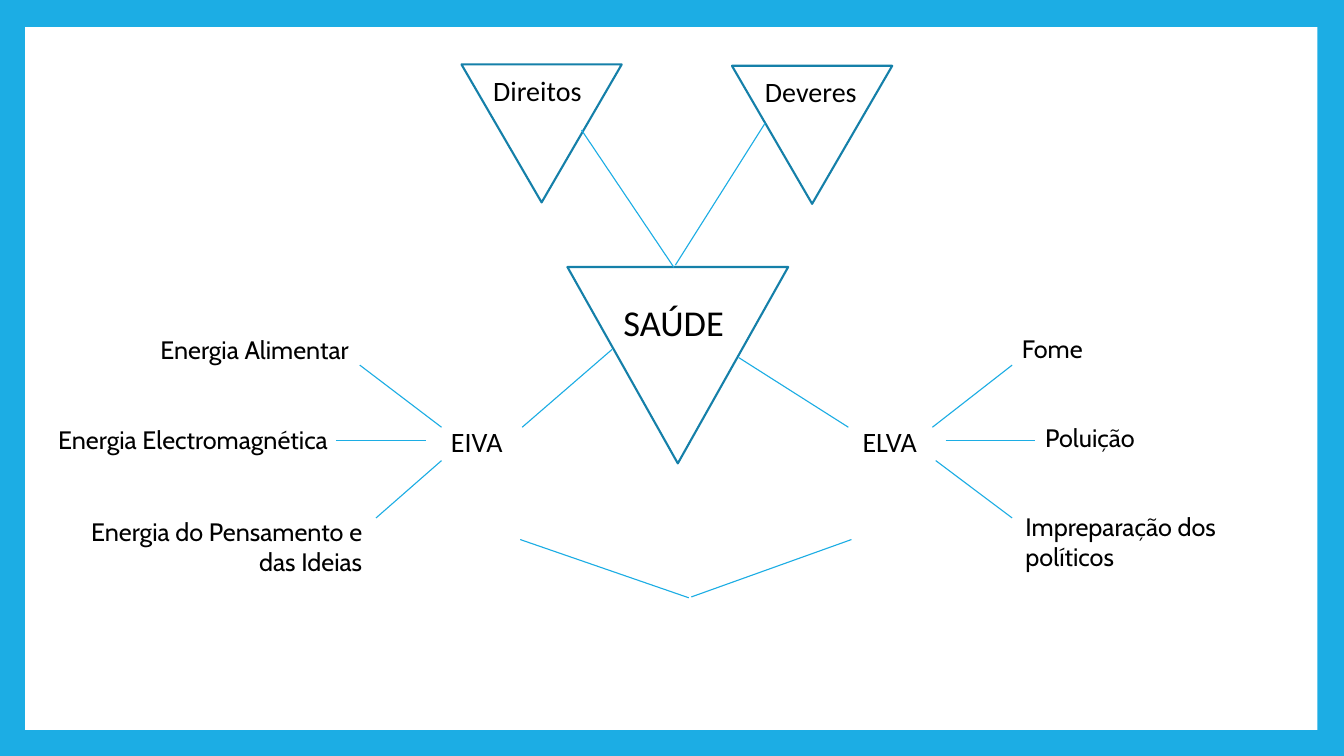
from dataclasses import dataclass

from lxml.etree import SubElement
from pptx import Presentation
from pptx.dml.color import RGBColor
from pptx.enum.shapes import MSO_CONNECTOR as Connector, MSO_SHAPE as Shape
from pptx.enum.text import MSO_AUTO_SIZE as AutoSize, PP_ALIGN as Align
from pptx.oxml.ns import qn
from pptx.util import Pt


@dataclass(frozen=True)
class Theme:
    blue: RGBColor = RGBColor(0x1C, 0xAD, 0xE4)
    outline: RGBColor = RGBColor(0x15, 0x80, 0xA9)
    paper: RGBColor = RGBColor(0xFF, 0xFF, 0xFF)
    ink: RGBColor = RGBColor(0, 0, 0)
    node_font: str = "Calibri"
    cause_font: str = "Cabin"
    center_size: int = 26
    node_size: int = 20
    cause_size: int = 18


theme = Theme()

presentation = Presentation()
presentation.slide_width = Pt(960)
presentation.slide_height = Pt(540)
slide = presentation.slides.add_slide(presentation.slide_layouts[6])
slide.background.fill.solid()
slide.background.fill.fore_color.rgb = theme.blue


def add_label(text, box, font, size, align=Align.LEFT):
    text_box = slide.shapes.add_textbox(*[Pt(length) for length in box])
    frame = text_box.text_frame
    frame.word_wrap = True
    frame.auto_size = AutoSize.SHAPE_TO_FIT_TEXT
    paragraph = frame.paragraphs[0]
    paragraph.alignment = align
    run = paragraph.add_run()
    run.text = text
    run.font.name = font
    run.font.size = Pt(size)
    run.font.color.rgb = theme.ink
    return paragraph


panel = slide.shapes.add_shape(Shape.RECTANGLE, Pt(18), Pt(19.4), Pt(923), Pt(502))
panel.shadow.inherit = False
panel.fill.solid()
panel.fill.fore_color.rgb = theme.paper
panel.line.fill.background()

triangles = [
    (329.6, 46, 114.5, 98.6),
    (522.8, 47, 114.5, 98.6),
    (405.3, 190.7, 157.7, 140.3),
]
for box in triangles:
    triangle = slide.shapes.add_shape(Shape.ISOSCELES_TRIANGLE, *[Pt(length) for length in box])
    triangle.rotation = 180
    triangle.shadow.inherit = False
    triangle.fill.background()
    triangle.line.color.rgb = theme.outline
    triangle.line.width = Pt(1.5)

links = [
    (415.4, 92.9, 481.4, 191),
    (546.5, 88, 482.4, 189.4),
    (527.6, 255.4, 606, 305.2),
    (373, 305.2, 437.2, 249.6),
    (257, 260.8, 315.4, 305.2),
    (240, 314.6, 304, 314.6),
    (268.6, 370, 315.4, 329),
    (666, 305.2, 723, 260.8),
    (675.4, 314.6, 739.4, 314.6),
    (723, 370, 668.4, 329),
    (371.6, 385.4, 492, 427),
    (608.2, 385.4, 493.8, 426.4),
]
for ends in links:
    link = slide.shapes.add_connector(Connector.STRAIGHT, *[Pt(length) for length in ends])
    link.line.color.rgb = theme.blue
    link.line.width = Pt(0.79)
    SubElement(link._element.spPr, qn("a:effectLst"))

nodes = [
    ("Direitos", (345.2, 47, 83, 33), theme.node_size),
    ("Deveres", (539.3, 48, 82, 33), theme.node_size),
    ("SAÚDE", (438.2, 208.8, 94, 41), theme.center_size),
    ("EIVA", (315, 298, 57, 33), theme.node_size),
    ("ELVA", (609, 298, 57, 33), theme.node_size),
]
for text, box, size in nodes:
    paragraph = add_label(text, box, theme.node_font, size)
    paragraph.line_spacing = 1.07
    paragraph.space_after = Pt(8)

causes = [
    ("Energia Alimentar", (67.6, 235.6, 188.6, 29), Align.RIGHT),
    ("Energia Electromagnética", (34.5, 299.8, 210, 29), Align.LEFT),
    ("Energia do Pensamento e das Ideias", (57.8, 365.2, 208, 51), Align.RIGHT),
    ("Fome", (722.8, 234.2, 66, 29), Align.LEFT),
    ("Poluição", (739.4, 298.4, 88, 29), Align.LEFT),
    ("Impreparação dos políticos", (725.4, 361.4, 160, 51), Align.LEFT),
]
for text, box, align in causes:
    add_label(text, box, theme.cause_font, theme.cause_size, align)

presentation.save("out.pptx")
